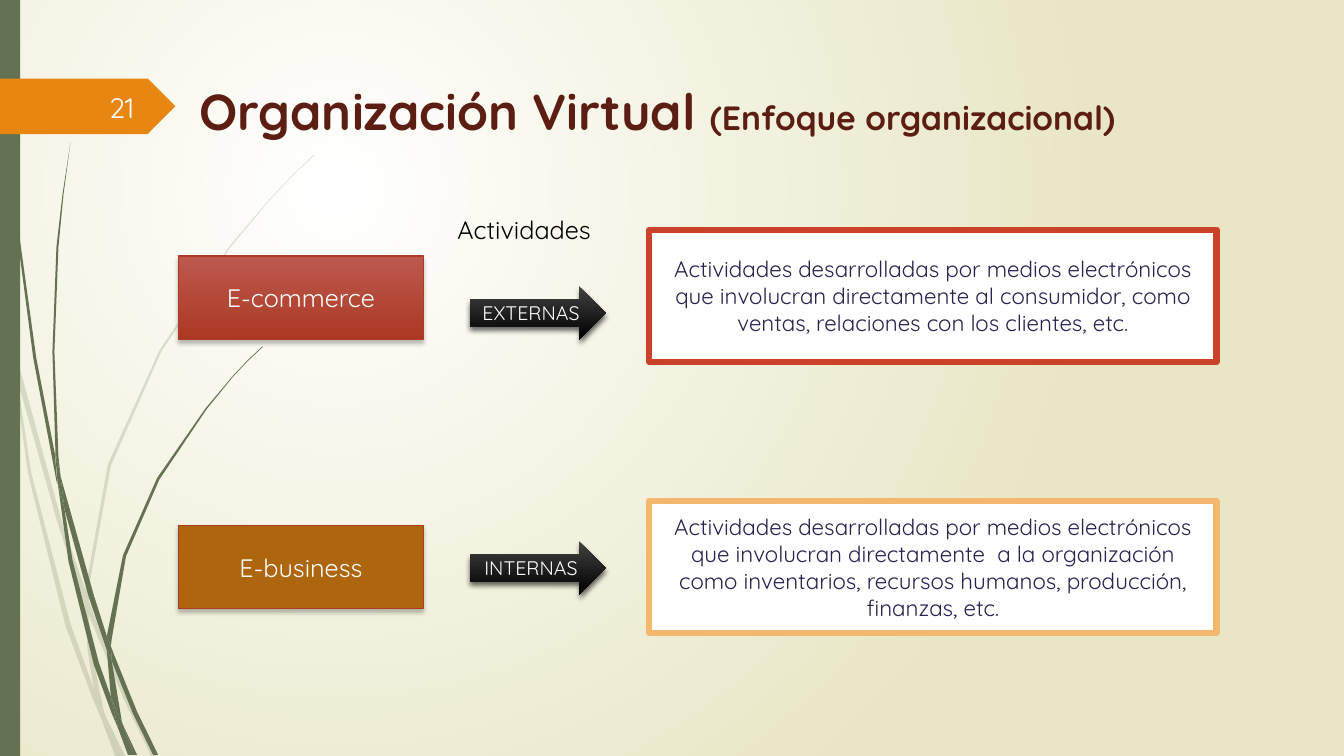
from pptx import Presentation
from pptx.dml.color import RGBColor
from pptx.enum.shapes import MSO_SHAPE
from pptx.enum.text import MSO_ANCHOR, MSO_AUTO_SIZE, PP_ALIGN
from pptx.oxml import parse_xml
from pptx.oxml.ns import nsdecls, qn
from pptx.util import Inches, Pt
from lxml.etree import SubElement

FONT = "Quicksand"
WHITE = RGBColor(0xFF, 0xFF, 0xFF)
BLACK = RGBColor(0, 0, 0)
CREAM = RGBColor(0xE8, 0xE6, 0xC4)
GREEN = RGBColor(0x64, 0x72, 0x52)
ORANGE = RGBColor(0xE7, 0x87, 0x12)
MAROON = RGBColor(0x5C, 0x1E, 0x13)
NAVY = RGBColor(0x27, 0x22, 0x4E)
RED_LIGHT = RGBColor(0xBD, 0x59, 0x4E)
RED_DARK = RGBColor(0xAB, 0x38, 0x23)
RED_EDGE = RGBColor(0xAF, 0x39, 0x24)
RED_FRAME = RGBColor(0xCB, 0x42, 0x2B)
BROWN = RGBColor(0xAD, 0x65, 0x0E)
PEACH = RGBColor(0xF4, 0xB7, 0x6E)
CHARCOAL = RGBColor(0x41, 0x41, 0x41)


def write_text(shape, text, size, color, align=PP_ALIGN.CENTER, anchor=MSO_ANCHOR.MIDDLE):
    frame = shape.text_frame
    frame.word_wrap = True
    frame.vertical_anchor = anchor
    paragraph = frame.paragraphs[0]
    paragraph.text = text
    paragraph.alignment = align
    paragraph.font.name = FONT
    paragraph.font.size = Pt(size)
    paragraph.font.color.rgb = color


presentation = Presentation()
presentation.slide_width = Inches(40 / 3)
presentation.slide_height = Inches(7.5)
slide = presentation.slides.add_slide(presentation.slide_layouts[5])
shapes = slide.shapes

# Background: radial gradient centred in the upper left quarter
background = slide.background.fill
background.gradient()
for stop, color in zip(background.gradient_stops, (WHITE, CREAM)):
    stop.color.rgb = color
linear = slide.background._cSld.find(".//" + qn("a:lin"))
linear.getparent().replace(linear, parse_xml(
    f'<a:path {nsdecls("a")} path="circle">'
    '<a:fillToRect l="50000" t="50000" r="100000" b="100000"/></a:path>'))

# Grass: each blade section is the outline of its two edges
pale_grass = [
    [(0.11, 3.5), (0.09, 3.22), (0, 2.82), (0, 2.99), (0.1, 3.44)],
    [(0.58, 5.22), (0.84, 5.99), (0.85, 5.86), (0.62, 5.2), (0.14, 3.45), (0.17, 3.76)],
    [(0.92, 6.07), (0.88, 5.96), (0.88, 6.1), (1.23, 6.94), (1.5, 7.5), (1.55, 7.5), (1.27, 6.92)],
    [(1.19, 7.5), (1.24, 7.5), (1.05, 7.11)],
    [(0.93, 6.83), (0.7, 6.19), (0.31, 4.69), (0.17, 3.76), (0.11, 3.5), (0.28, 4.7),
     (0.65, 6.21), (0.92, 6.93), (1.01, 7.14), (0.99, 7.07)],
    [(0.84, 5.99), (0.87, 6.46), (0.93, 6.83), (0.96, 6.92), (1.05, 7.11), (1.03, 7.06),
     (0.91, 6.46), (0.88, 6.1), (0.88, 6.08)],
    [(0.88, 5.84), (1.1, 4.62), (1.6, 3.49), (2.29, 2.45), (2.68, 1.98), (2.9, 1.75),
     (3.12, 1.54), (3.12, 1.53), (2.89, 1.75), (2.68, 1.97), (2.28, 2.44), (1.58, 3.48),
     (1.07, 4.61), (0.85, 5.84), (0.85, 5.86), (0.88, 5.96)],
    [(1.01, 7.14), (1.14, 7.5), (1.19, 7.5)],
    [(0.88, 6.08), (0.88, 6.1), (0.88, 5.96), (0.85, 5.86), (0.84, 5.99)],
    [(0.96, 6.92), (0.93, 6.83), (0.99, 7.07), (1.01, 7.14), (1.19, 7.5), (1.05, 7.11)],
]
dark_grass = [
    [(0.07, 1.1), (0.17, 2.33), (0.33, 3.55), (0.56, 4.77), (0.57, 4.81), (0.55, 4.57),
     (0.55, 4.53), (0.36, 3.55), (0.19, 2.32), (0.08, 1.09), (0.05, 0.48), (0.04, 0),
     (0.03, 0), (0.04, 0.48)],
    [(0.88, 5.92), (1.06, 6.45), (1.06, 6.33), (1.06, 6.31), (0.93, 5.9), (0.6, 4.72),
     (0.64, 5.05)],
    [(1.13, 6.49), (1.1, 6.41), (1.11, 6.56), (1.32, 7.08), (1.52, 7.49), (1.57, 7.49),
     (1.36, 7.06)],
    [(1.1, 6.91), (0.98, 6.57), (0.72, 5.56), (0.64, 5.05), (0.57, 4.77), (0.68, 5.57),
     (0.93, 6.59), (1.11, 7.08), (1.17, 7.22), (1.16, 7.17)],
    [(0.6, 4.72), (0.58, 4.53), (0.54, 3.49), (0.58, 2.45), (0.63, 1.93), (0.7, 1.41),
     (0.62, 1.93), (0.56, 2.45), (0.52, 3.49), (0.55, 4.49)],
    [(1.33, 7.49), (1.36, 7.49), (1.22, 7.19)],
    [(0.57, 4.77), (0.64, 5.05), (0.6, 4.72), (0.55, 4.49), (0.55, 4.53)],
    [(1.11, 6.33), (1.25, 5.52), (1.58, 4.76), (2.05, 4.06), (2.31, 3.74), (2.45, 3.59),
     (2.61, 3.44), (2.6, 3.44), (2.45, 3.58), (2.31, 3.73), (2.04, 4.05), (1.56, 4.74),
     (1.22, 5.51), (1.06, 6.31), (1.1, 6.41)],
    [(1.17, 7.22), (1.27, 7.49), (1.31, 7.49)],
    [(1.06, 6.45), (1.1, 6.91), (1.16, 7.06), (1.22, 7.19), (1.21, 7.16), (1.11, 6.56),
     (1.09, 6.51)],
    [(1.06, 6.45), (1.09, 6.51), (1.11, 6.56), (1.1, 6.41), (1.06, 6.31), (1.06, 6.33)],
    [(1.16, 7.06), (1.1, 6.91), (1.16, 7.17), (1.17, 7.22), (1.3, 7.49), (1.33, 7.49),
     (1.22, 7.19)],
]
for grass, opacity in ((pale_grass, 20), (dark_grass, 100)):
    group = shapes.add_group_shape()
    for section in grass:
        outline = [(x * 100, y * 100) for x, y in section]
        builder = group.shapes.build_freeform(*outline[0], scale=Inches(0.01))
        builder.add_line_segments(outline[1:], close=True)
        blade = builder.convert_to_shape()
        blade.shadow.inherit = False
        blade.fill.solid()
        blade.fill.fore_color.rgb = GREEN
        blade.line.fill.background()
        if opacity < 100:
            color = blade.element.spPr.find(qn("a:solidFill"))[0]
            SubElement(color, qn("a:alpha"), val=str(opacity * 1000))

# Side bar and page number tag
for kind, top, width, height, color in (
        (MSO_SHAPE.RECTANGLE, 0, 0.2, 7.5, GREEN),
        (MSO_SHAPE.PENTAGON, 0.78, 1.74, 0.55, ORANGE)):
    shape = shapes.add_shape(kind, 0, Inches(top), Inches(width), Inches(height))
    shape.shadow.inherit = False
    shape.fill.solid()
    shape.fill.fore_color.rgb = color
    shape.line.fill.background()
page_number = shapes.add_textbox(Inches(0.58), Inches(0.86), Inches(0.85), Inches(0.4))
write_text(page_number, "21", 20, WHITE, PP_ALIGN.RIGHT)

# Title
title = shapes.title
title.left, title.top = Inches(1.88), Inches(0.74)
title.width, title.height = Inches(9.7), Inches(0.66)
title.text_frame.auto_size = MSO_AUTO_SIZE.NONE
write_text(title, "Organización Virtual ", 36, MAROON, PP_ALIGN.LEFT, MSO_ANCHOR.TOP)
heading = title.text_frame.paragraphs[0]
heading.font.bold = True
subtitle = heading.add_run()
subtitle.text = "(Enfoque organizacional)"
subtitle.font.size = Pt(24)

# Rows: concept box, arrow, framed description
rows = [
    (2.54, "E-commerce", (RED_LIGHT, RED_DARK), 2.84, "EXTERNAS", 2.28, RED_FRAME,
     "Actividades desarrolladas por medios electrónicos que involucran directamente "
     "al consumidor, como ventas, relaciones con los clientes, etc."),
    (5.21, "E-business", (BROWN,), 5.37, "INTERNAS", 4.97, PEACH,
     "Actividades desarrolladas por medios electrónicos que involucran directamente  "
     "a la organización como inventarios, recursos humanos, producción, finanzas, etc."),
]
for box_top, concept, box_fill, arrow_top, scope, frame_top, frame_color, description in rows:
    # kind, position, fill, line, shadow (opacity, blur, distance), text
    parts = [
        (MSO_SHAPE.RECTANGLE, (1.77, box_top, 2.43, 0.83), box_fill, (RED_EDGE, 0.75),
         (25, 3, 2), (concept, 18, WHITE)),
        (MSO_SHAPE.RIGHT_ARROW, (4.66, arrow_top, 1.35, 0.53), (CHARCOAL, BLACK), None,
         (60, 4, 3), (scope, 14, WHITE)),
        (MSO_SHAPE.RECTANGLE, (6.44, frame_top, 5.63, 1.31), (WHITE,), (frame_color, 4.5),
         None, (description, 16, NAVY)),
    ]
    for kind, position, fill, line, shadow, text in parts:
        shape = shapes.add_shape(kind, *map(Inches, position))
        shape.shadow.inherit = False
        if len(fill) == 2:
            shape.fill.gradient()
            shape.fill.gradient_angle = 270
            for stop, color in zip(shape.fill.gradient_stops, fill):
                stop.color.rgb = color
        else:
            shape.fill.solid()
            shape.fill.fore_color.rgb = fill[0]
        if line:
            shape.line.color.rgb = line[0]
            shape.line.width = Pt(line[1])
        else:
            shape.line.fill.background()
        if shadow:
            opacity, blur, distance = shadow
            shape.element.spPr.find(qn("a:effectLst")).append(parse_xml(
                f'<a:outerShdw {nsdecls("a")} blurRad="{Pt(blur)}" dist="{Pt(distance)}" '
                f'dir="5400000" rotWithShape="0"><a:srgbClr val="000000">'
                f'<a:alpha val="{opacity * 1000}"/></a:srgbClr></a:outerShdw>'))
        write_text(shape, *text)

# Label above the arrows
label = shapes.add_textbox(Inches(4.44), Inches(2.08), Inches(1.66), Inches(0.4))
write_text(label, "Actividades", 18, BLACK, PP_ALIGN.LEFT, MSO_ANCHOR.TOP)
label.text_frame.word_wrap = False

presentation.save("out.pptx")
